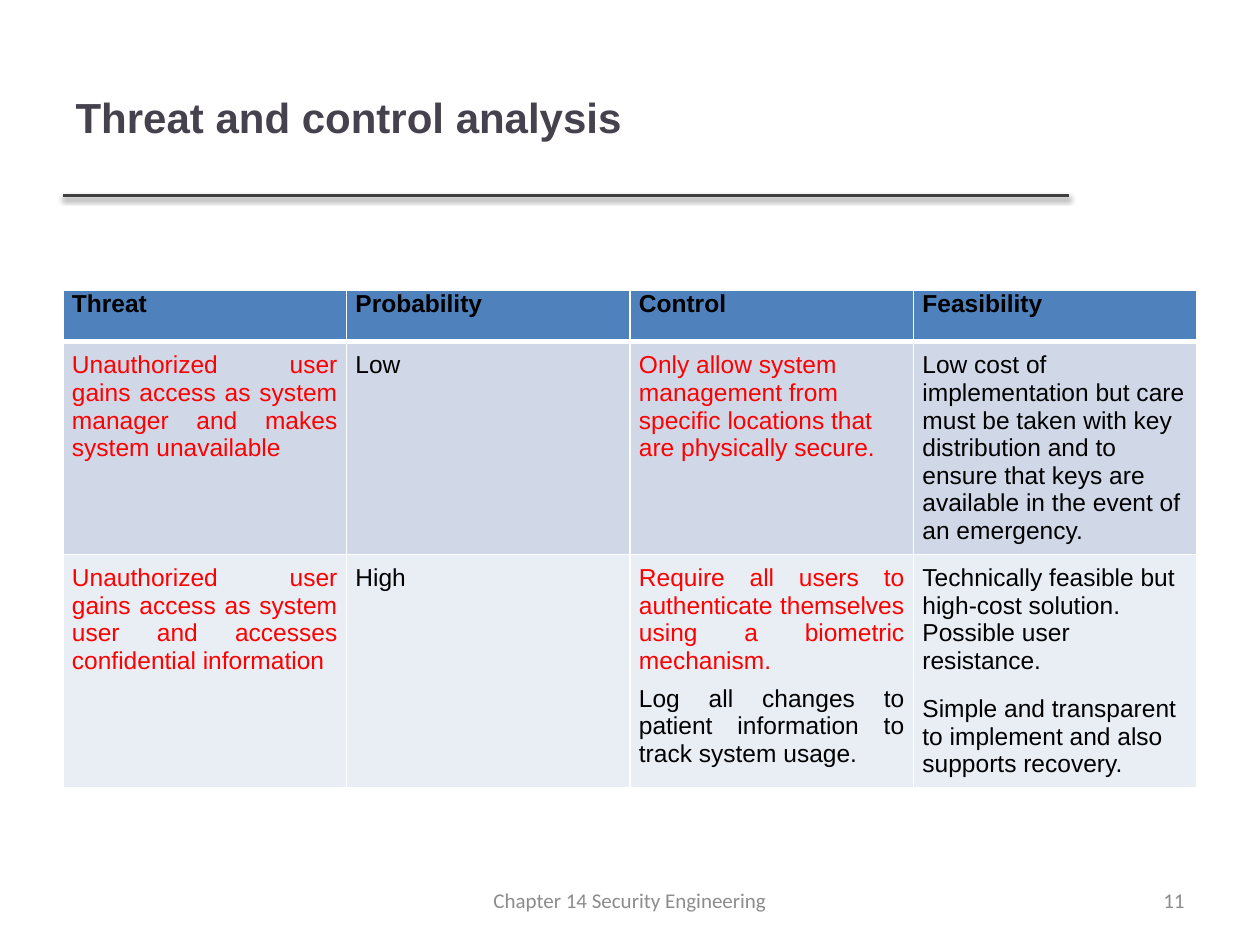
from lxml.etree import SubElement as Sub
from pptx import Presentation
from pptx.dml.color import RGBColor
from pptx.enum.shapes import MSO_CONNECTOR as Link
from pptx.enum.text import MSO_ANCHOR as Anchor, PP_ALIGN as Align
from pptx.oxml.ns import qn
from pptx.util import Cm, Pt

BODY = {"name": "Arial", "size": Pt(14), "bold": False}
HEAD = BODY | {"bold": True}
TITLE = HEAD | {"size": Pt(24)}
FOOT = {"name": "Calibri", "size": Pt(12)}
RED, BLACK, GREY = "FF0000", "000000", "8C8C8C"
LEFT, JUST = Align.LEFT, Align.JUSTIFY

HEADS = ["Threat", "Probability", "Control", "Feasibility"]
ROWS = [
    [
        (JUST, [("Unauthorized user gains access as system manager and makes system unavailable", RED)]),
        (JUST, [("Low", BLACK)]),
        (LEFT, [("Only allow system management from specific locations that are physically secure.", RED)]),
        (LEFT, [("Low cost of implementation but care must be taken with key distribution "
                 "and to ensure that keys are available in the event of an emergency.", BLACK)]),
    ],
    [
        (JUST, [("Unauthorized user gains access as system user and accesses confidential information", RED)]),
        (JUST, [("High", BLACK)]),
        (JUST, [("Require all users to authenticate themselves using a biometric mechanism.", RED),
                ("Log all changes to patient information to track system usage.", BLACK)]),
        (LEFT, [("Technically feasible but high-cost solution. Possible user resistance.", BLACK),
                ("Simple and transparent to implement and also supports recovery.", BLACK)]),
    ],
]


def rgb(hue):
    """Turn a hex string into a colour."""
    return RGBColor.from_string(hue)


def apply(item, form):
    """Set each attribute of the item from a dict."""
    for key, val in form.items():
        setattr(item, key, val)


def write(para, text, form, hue, align):
    """Fill a paragraph with one formatted run."""
    para.alignment = align
    run = para.add_run()
    run.text = text
    apply(run.font, form)
    run.font.color.rgb = rgb(hue)


def paint(parent, hue):
    """Add a solid fill element and return its colour."""
    return Sub(Sub(parent, qn("a:solidFill")), qn("a:srgbClr"), val=hue)


def head(slide, box, text):
    """Place the title with a shadowed rule along its foot."""
    left, top, width, height = box
    title = slide.shapes.title
    apply(title, dict(left=left, top=top, width=width, height=height))
    title.text_frame.vertical_anchor = Anchor.MIDDLE
    write(title.text_frame.paragraphs[0], text, TITLE, "46424D", LEFT)
    base = top + height
    rule = slide.shapes.add_connector(Link.STRAIGHT, left, base, left + width, base)
    rule.line.color.rgb = rgb("404040")
    rule.line.width = Pt(2)
    glow = Sub(Sub(rule._element.spPr, qn("a:effectLst")), qn("a:outerShdw"),
               blurRad=str(Pt(3.1)), dist=str(Pt(1.6)), dir="5400000", rotWithShape="0")
    Sub(Sub(glow, qn("a:srgbClr"), val=BLACK), qn("a:alpha"), val="38000")


def dress(cell, hue, pad, edges):
    """Give a cell its insets, white borders and fill."""
    apply(cell, dict(margin_left=Cm(0.18), margin_right=Cm(0.18),
                     margin_top=pad, margin_bottom=pad))
    for side, size in zip("LRTB", edges):
        paint(Sub(cell._tc.get_or_add_tcPr(), qn("a:ln" + side), w=str(Pt(size))), "FFFFFF")
    cell.fill.solid()
    cell.fill.fore_color.rgb = rgb(hue)


def grid(slide, box):
    """Place the table of threats and controls."""
    table = slide.shapes.add_table(len(ROWS) + 1, len(HEADS), *box).table
    for row, tall in zip(table.rows, (1.04, 4.28, 4.7)):
        row.height = Cm(tall)
    for col, text in enumerate(HEADS):
        cell = table.cell(0, col)
        dress(cell, "4F81BD", 0, (1, 1, 1, 3))
        write(cell.text_frame.paragraphs[0], text, HEAD, BLACK, JUST)
    looks = [("D0D8E8", (1, 1, 3, 1)), ("E9EDF4", (1, 1, 1, 1))]
    for num, (line, (hue, edges)) in enumerate(zip(ROWS, looks), 1):
        for col, (align, parts) in enumerate(line):
            cell = table.cell(num, col)
            dress(cell, hue, Cm(0.2), edges)
            frame = cell.text_frame
            for pos, (text, tint) in enumerate(parts):
                para = frame.add_paragraph() if pos else frame.paragraphs[0]
                if pos:
                    para.space_before = Pt(12 if align == LEFT else 6)
                write(para, text, BODY, tint, align)


def foot(slide, box, text, align):
    """Place one grey footer text."""
    frame = slide.shapes.add_textbox(*box).text_frame
    apply(frame, dict(word_wrap=True, vertical_anchor=Anchor.MIDDLE))
    write(frame.paragraphs[0], text, FOOT, GREY, align)


def main():
    """Build the slide and save it."""
    deck = Presentation()
    apply(deck, dict(slide_width=Cm(25.4), slide_height=Cm(19.05)))
    slide = deck.slides.add_slide(deck.slide_layouts[5])
    head(slide, (Cm(1.27), Cm(0.76), Cm(20.28), Cm(3.18)), "Threat and control analysis")
    grid(slide, (Cm(1.27), Cm(5.85), Cm(22.86), Cm(10.02)))
    foot(slide, (Cm(8.68), Cm(17.65), Cm(8.04), Cm(1.01)), "Chapter 14 Security Engineering", Align.CENTER)
    foot(slide, (Cm(18.2), Cm(17.65), Cm(5.93), Cm(1.01)), "11", Align.RIGHT)
    deck.save("out.pptx")


if __name__ == "__main__":
    main()
